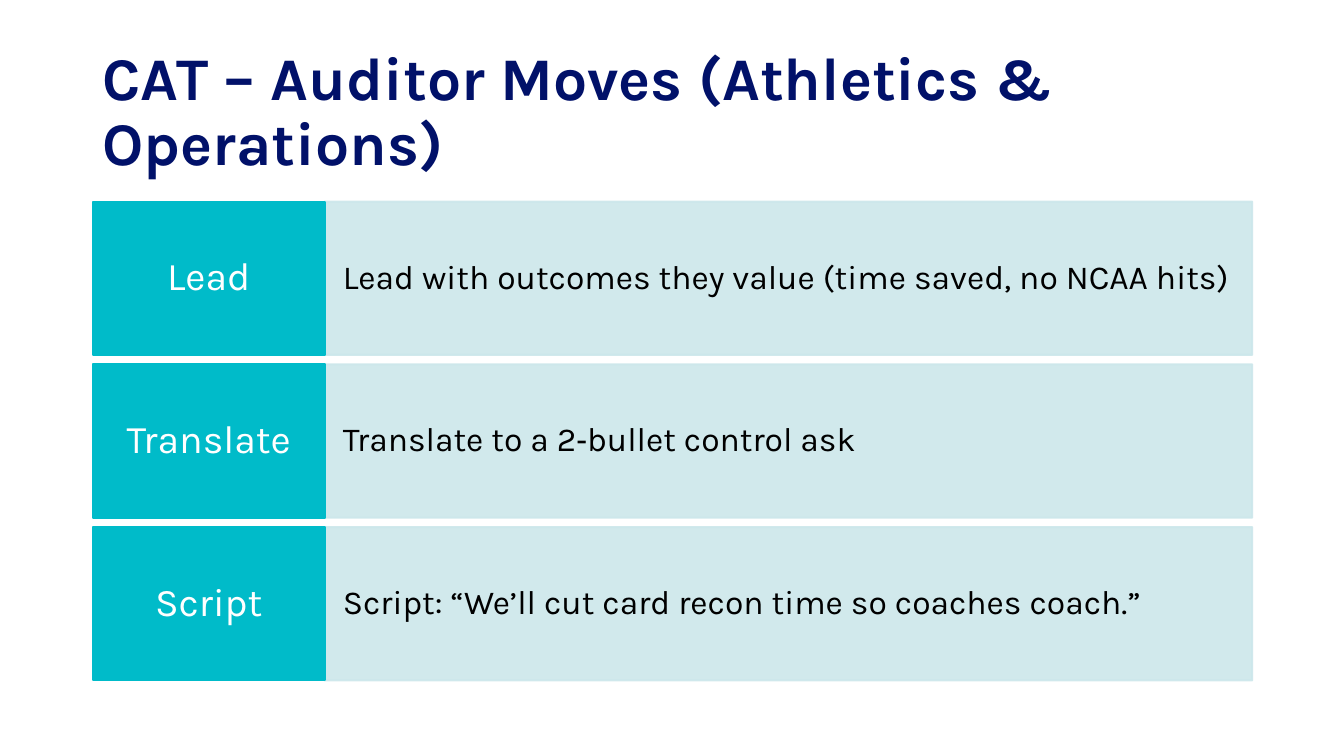
from lxml import etree
from pptx import Presentation
from pptx import util as u
from pptx.dml.color import RGBColor
from pptx.enum import shapes, text
from pptx.oxml.ns import qn

PX = 9144  # 100 px to the inch
FONT = "Karla"
NAVY, TEAL, PALE = "011169", "00BBC9", "CCE7EB"
BLACK, WHITE = "000000", "FFFFFF"
LEFT, TOP, HIGH = 92, 200, 152
LABEL, PANEL = 230, 920
GAP = 9.5

MOVES = [
    ("Lead", "Lead with outcomes they value (time saved, no NCAA hits)"),
    ("Translate", "Translate to a 2‑bullet control ask"),
    ("Script", "Script: “We’ll cut card recon time so coaches coach.”"),
]


def px(num):
    return u.Emu(round(num * PX))


def paint(fill, tone, alpha=100):
    """Make a fill solid, with its opacity in percent."""
    fill.solid()
    fill.fore_color.rgb = RGBColor.from_string(tone)
    if alpha < 100:
        node = fill._xPr.find(qn("a:solidFill"))[0]
        etree.SubElement(node, qn("a:alpha"), val=str(alpha * 1000))


def write(shape, words, size, tone, pad, align=text.PP_ALIGN.LEFT, bold=False):
    """Set one middle-anchored paragraph; pad is (side, top and bottom)."""
    frame = shape.text_frame
    frame.word_wrap = True
    frame.vertical_anchor = text.MSO_ANCHOR.MIDDLE
    frame.margin_left = frame.margin_right = px(pad[0])
    frame.margin_top = frame.margin_bottom = px(pad[1])
    para = frame.paragraphs[0]
    para.alignment = align
    para.line_spacing = 0.9
    run = para.add_run()
    run.text = words
    run.font.name = FONT
    run.font.size = u.Pt(size)
    run.font.bold = bold
    run.font.color.rgb = RGBColor.from_string(tone)


def block(slide, left, top, width, tone, alpha=100):
    box = slide.shapes.add_shape(
        shapes.MSO_SHAPE.RECTANGLE, px(left), px(top), px(width), px(HIGH))
    box.shadow.inherit = False
    paint(box.fill, tone, alpha)
    paint(box.line.fill, tone, alpha)
    box.line.width = u.Pt(1.5)
    return box


def title(slide, words):
    box = slide.shapes.add_textbox(px(LEFT), px(40), px(1150), px(145))
    write(box, words, 43.2, NAVY, (10, 5), bold=True)


def move(slide, top, name, words):
    panel = block(slide, LEFT + LABEL, top, PANEL, PALE, 90)
    write(panel, words, 24, BLACK, (18, 39))
    label = block(slide, LEFT, top, LABEL, TEAL)
    write(label, name, 28, WHITE, (12, 15), text.PP_ALIGN.CENTER)


def main():
    deck = Presentation()
    deck.slide_width, deck.slide_height = px(1333), px(750)
    slide = deck.slides.add_slide(deck.slide_layouts[6])
    title(slide, "CAT – Auditor Moves (Athletics & Operations)")
    for row, (name, words) in enumerate(MOVES):
        move(slide, TOP + row * (HIGH + GAP), name, words)
    deck.save("out.pptx")


if __name__ == "__main__":
    main()
